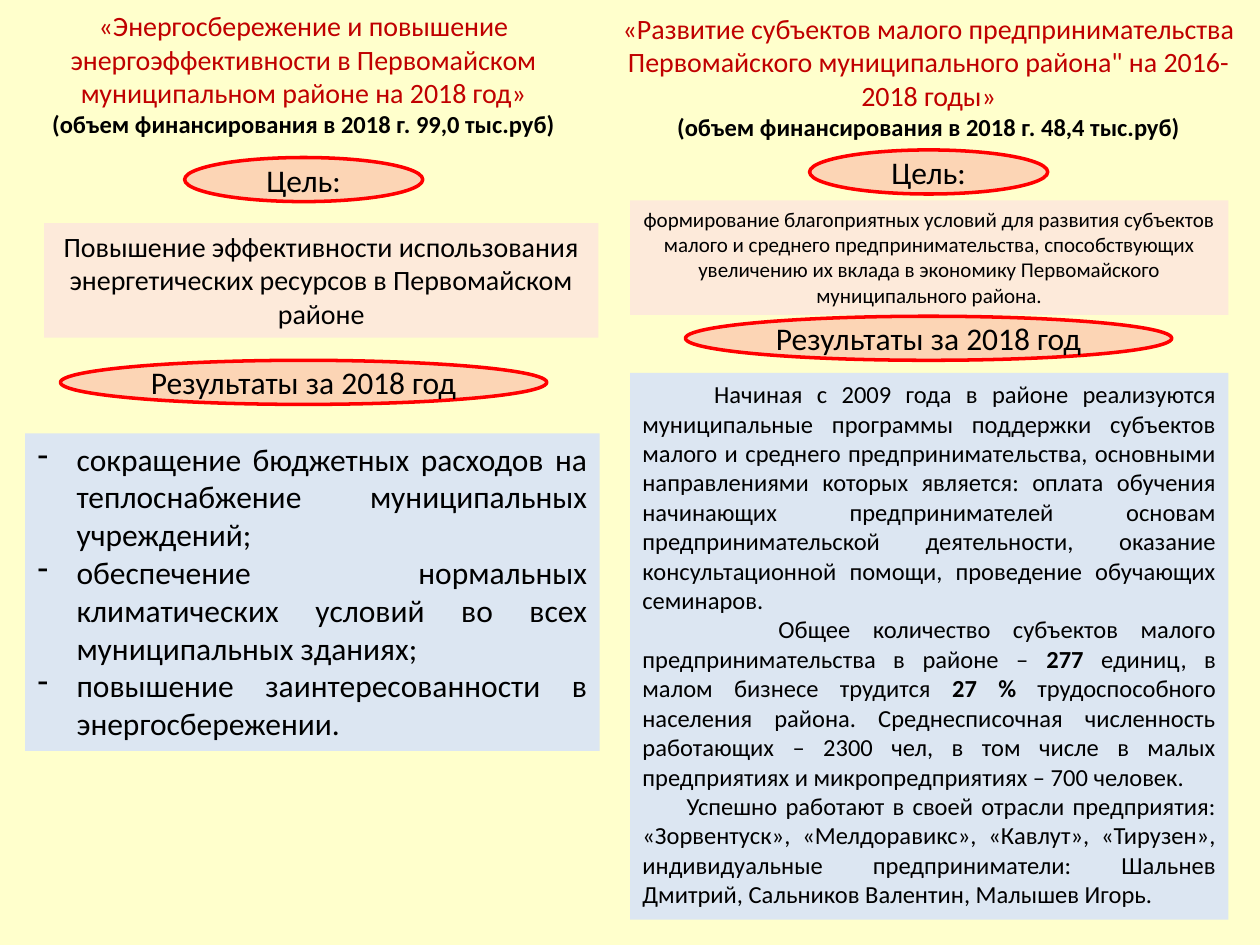
import pptx
import pptx.util
import pptx.dml.color
import pptx.enum.shapes
import pptx.enum.text
import lxml.etree

Inches, Pt = pptx.util.Inches, pptx.util.Pt
RGB = pptx.dml.color.RGBColor.from_string
SHAPE = pptx.enum.shapes.MSO_SHAPE
ALIGN = pptx.enum.text.PP_ALIGN
ANCHOR = pptx.enum.text.MSO_ANCHOR

THEME = {
    "font": "Calibri", "background": "FFFFCC", "title": "C00000", "text": "000000",
    "goal": "FDEADA", "results": "DCE6F2", "label": "FCD5B5", "label_line": "FF0000",
    "title_size": 16, "budget_size": 14, "label_size": 18,
}
LABEL_HEIGHT = 0.35
GOAL_LABEL, RESULTS_LABEL = ("Цель:", 1.89), ("Результаты за 2018 год", 3.86)

# Content: boxes are (left, top, width, height); paragraphs are lists of (text, bold) runs
PROGRAMS = [
    {
        "title": "«Энергосбережение и повышение энергоэффективности в Первомайском "
                 "муниципальном районе на 2018 год»",
        "budget": "(объем финансирования в 2018 г. 99,0 тыс.руб)",
        "title_box": (-0.09, 0.02, 5, 1.14),
        "label_tops": (1.25, 2.86),
        "goal": "Повышение эффективности использования энергетических ресурсов "
                "в Первомайском районе",
        "goal_box": (0.35, 1.77, 4.4, 0.91), "goal_size": 16,
        "results": [
            [("сокращение бюджетных расходов на теплоснабжение муниципальных учреждений;", False)],
            [("обеспечение нормальных климатических условий во всех муниципальных зданиях;", False)],
            [("повышение заинтересованности в энергосбережении.", False)],
        ],
        "results_box": (0.2, 3.44, 4.56, 2.52), "results_size": 18,
        "bullet": "-", "margin": 0.31, "indents": (-0.31, -0.31, -0.31),
    },
    {
        "title": "«Развитие субъектов малого предпринимательства Первомайского "
                 "муниципального района\" на 2016-2018 годы»",
        "budget": "(объем финансирования в 2018 г. 48,4 тыс.руб)",
        "title_box": (4.83, 0.04, 5.08, 1.14),
        "label_tops": (1.19, 2.51),
        "goal": "формирование благоприятных условий для развития субъектов малого и среднего "
                "предпринимательства, способствующих увеличению их вклада в экономику "
                "Первомайского муниципального района.",
        "goal_box": (5, 1.59, 4.75, 0.91), "goal_size": 12,
        "results": [
            [("Начиная с 2009 года в районе реализуются муниципальные программы поддержки "
              "субъектов малого и среднего предпринимательства, основными направлениями "
              "которых является: оплата обучения начинающих предпринимателей основам "
              "предпринимательской деятельности, оказание консультационной помощи, "
              "проведение обучающих семинаров.", False)],
            [("Общее количество субъектов малого предпринимательства в районе – ", False),
             ("277", True),
             (" единиц, в малом бизнесе трудится ", False),
             ("27 %", True),
             (" трудоспособного населения района. Среднесписочная численность работающих – "
              "2300 чел, в том числе в малых предприятиях и микропредприятиях – "
              "700 человек.", False)],
            [("Успешно работают в своей отрасли предприятия: «Зорвентуск», «Мелдоравикс», "
              "«Кавлут», «Тирузен», индивидуальные предприниматели: Шальнев Дмитрий, "
              "Сальников Валентин, Малышев Игорь.", False)],
        ],
        "results_box": (5, 2.96, 4.75, 4.34), "results_size": 14,
        "bullet": None, "margin": 0, "indents": (0.57, 1.08, 0.35),
    },
]


def add_runs(p, runs, size, color=THEME["text"], align=ALIGN.CENTER):
    p.alignment = align
    for text, bold in runs:
        r = p.add_run()
        r.text = text
        r.font.name, r.font.size, r.font.bold = THEME["font"], Pt(size), bold
        r.font.color.rgb = RGB(color)


def add_block(slide, kind, box, fill, line=None, anchor=ANCHOR.TOP):
    sp = slide.shapes.add_shape(kind, *map(Inches, box))
    sp.shadow.inherit = False
    sp.fill.solid()
    sp.fill.fore_color.rgb = RGB(fill)
    if line:
        sp.line.color.rgb = RGB(line)
        sp.line.width = Pt(2)
    else:
        sp.line.fill.background()
    sp.text_frame.word_wrap = True
    sp.text_frame.vertical_anchor = anchor
    return sp.text_frame


def outline_text(r, color):
    ln = pptx.oxml.parse_xml(
        '<a:ln xmlns:a="http://schemas.openxmlformats.org/drawingml/2006/main" w="9525">'
        f'<a:solidFill><a:srgbClr val="{color}"/></a:solidFill></a:ln>')
    r.font._element.insert(0, ln)


def set_indent(p, margin, indent, bullet):
    pPr = p._p.get_or_add_pPr()
    pPr.set("marL", str(Inches(margin)))
    pPr.set("indent", str(Inches(indent)))
    if bullet:
        bu = lxml.etree.SubElement(pPr, pptx.oxml.ns.qn("a:buChar"))
        bu.set("char", bullet)


def add_program(slide, program):
    # Title and budget
    box = program["title_box"]
    tf = slide.shapes.add_textbox(*map(Inches, box)).text_frame
    tf.word_wrap = True
    p = tf.paragraphs[0]
    add_runs(p, [(program["title"], False)], THEME["title_size"], THEME["title"])
    outline_text(p.runs[0], THEME["title"])
    add_runs(tf.add_paragraph(), [(program["budget"], True)], THEME["budget_size"])

    # Goal
    tf = add_block(slide, SHAPE.RECTANGLE, program["goal_box"], THEME["goal"])
    add_runs(tf.paragraphs[0], [(program["goal"], False)], program["goal_size"])

    # Results
    tf = add_block(slide, SHAPE.RECTANGLE, program["results_box"], THEME["results"])
    for i, (runs, indent) in enumerate(zip(program["results"], program["indents"])):
        p = tf.add_paragraph() if i else tf.paragraphs[0]
        add_runs(p, runs, program["results_size"], align=ALIGN.JUSTIFY)
        set_indent(p, program["margin"], indent, program["bullet"])

    # Oval labels, centred under the title
    center = box[0] + box[2] / 2
    for (text, width), top in zip((GOAL_LABEL, RESULTS_LABEL), program["label_tops"]):
        oval = (center - width / 2, top, width, LABEL_HEIGHT)
        tf = add_block(slide, SHAPE.OVAL, oval, THEME["label"], THEME["label_line"], ANCHOR.MIDDLE)
        add_runs(tf.paragraphs[0], [(text, False)], THEME["label_size"])


def main():
    prs = pptx.Presentation()
    prs.slide_width, prs.slide_height = Inches(10), Inches(7.5)
    slide = prs.slides.add_slide(prs.slide_layouts[6])
    slide.background.fill.solid()
    slide.background.fill.fore_color.rgb = RGB(THEME["background"])
    for program in PROGRAMS:
        add_program(slide, program)
    prs.save("out.pptx")


if __name__ == "__main__":
    main()
